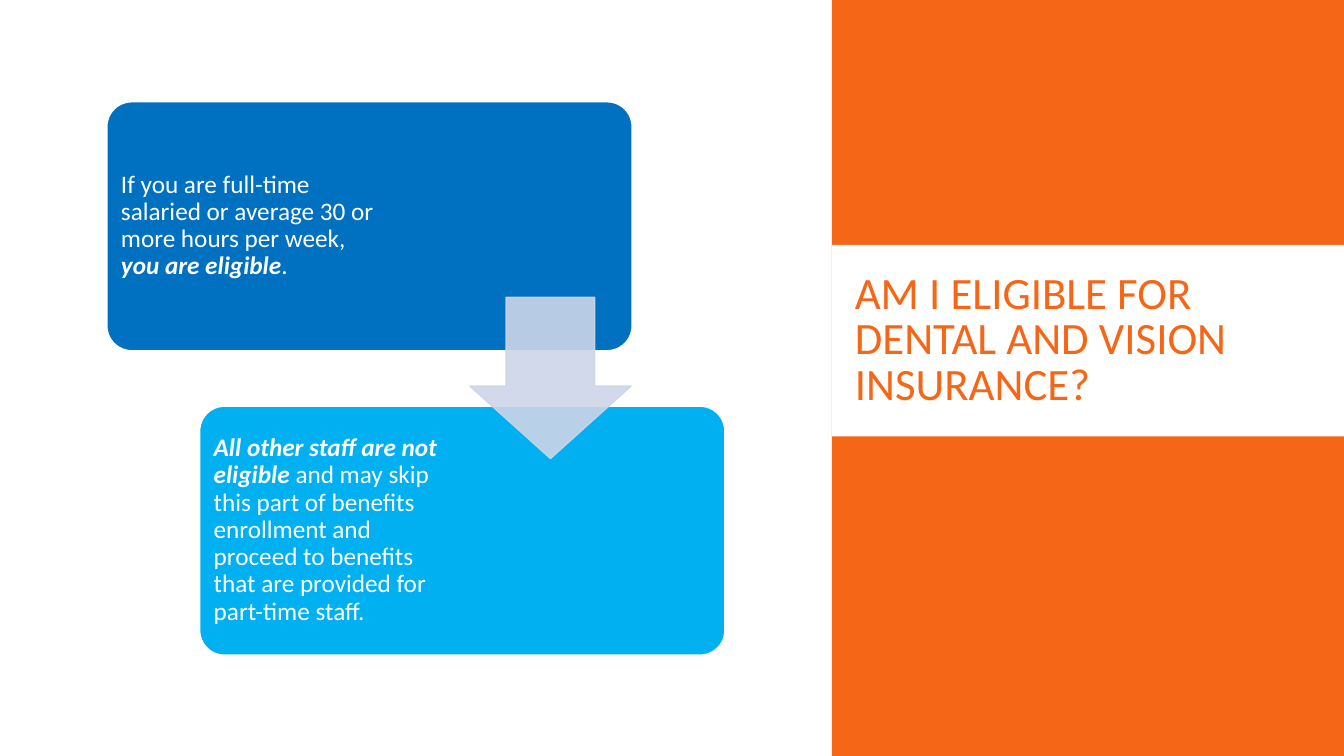
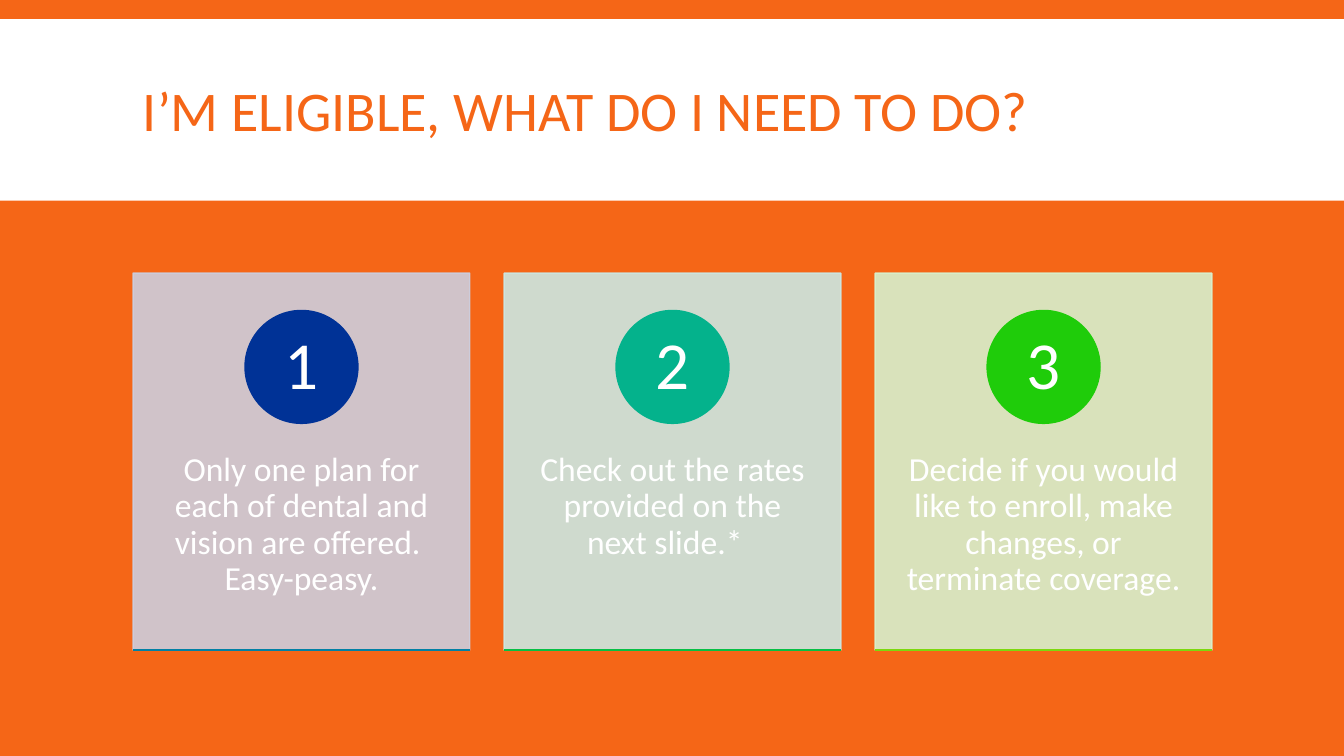
import pptx
import pptx.util
import pptx.dml.color
import pptx.enum.shapes
import pptx.enum.text
import pptx.oxml.ns
import lxml.etree

Inches = pptx.util.Inches
Pt = pptx.util.Pt
Shape = pptx.enum.shapes.MSO_SHAPE
Align = pptx.enum.text.PP_ALIGN
Anchor = pptx.enum.text.MSO_ANCHOR

COLORS = {
    "orange": "F56617", "white": "FFFFFF", "blue": "0070C0", "sky": "00B0F0",
    "mist": "CCD5E8", "lilac": "CCCEDD", "navy": "003296", "teal": "0280A4",
    "aqua": "CBE7E2", "jade": "04B28C", "green": "07BF45",
    "mint": "D7F0CD", "lime": "1FCC0A", "leaf": "7DD80E",
}
PLAIN = {"name": "Calibri", "bold": False, "italic": False}
STRONG = {"name": "Calibri", "bold": True, "italic": True}
TITLE = {"color": "orange", "gap": 0.85, "pad": (0.1, 0.05)}
MIDDLE = {"align": Align.CENTER}

ASK = "AM I ELIGIBLE FOR DENTAL AND VISION INSURANCE?"
RULES = [
    ("blue", 1.06, 1.01, 2.66, [
        ("If you are full-time salaried or average 30 or more hours per week, ", PLAIN),
        ("you are eligible", STRONG),
        (".", PLAIN)]),
    ("sky", 1.98, 4.03, 2.54, [
        ("All other staff are not eligible", STRONG),
        (" and may skip this part of benefits enrollment and proceed to "
         "benefits that are provided for part-time staff.", PLAIN)]),
]
TODO = "I’M ELIGIBLE, WHAT DO I NEED TO DO?"
STEPS = [
    ("Only one plan for each of dental and vision are offered.  Easy-peasy.",
     "lilac", "navy", "teal"),
    ("Check out the rates provided on the next slide.*  ", "aqua", "jade", "green"),
    ("Decide if you would like to enroll, make changes, or terminate coverage.",
     "mint", "lime", "leaf"),
]


def rgb(name):
    return pptx.dml.color.RGBColor.from_string(COLORS[name])


def fade(shape, alpha):
    for node in shape._element.spPr.iter(pptx.oxml.ns.qn("a:srgbClr")):
        lxml.etree.SubElement(node, pptx.oxml.ns.qn("a:alpha"), val=str(alpha * 1000))


def block(slide, kind, box, fill, edge=None, adjust=(), alpha=None):
    shape = slide.shapes.add_shape(kind, *map(Inches, box))
    shape.shadow.inherit = False
    shape.fill.solid()
    shape.fill.fore_color.rgb = rgb(fill)
    if edge:
        shape.line.color.rgb = rgb(edge)
        shape.line.width = Pt(1)
    else:
        shape.line.fill.background()
    for i, value in enumerate(adjust):
        shape.adjustments[i] = value
    if alpha:
        fade(shape, alpha)
    return shape


def label(slide, box, runs, size, color="white", gap=0.9, pad=(0.07, 0.07),
          align=Align.LEFT, anchor=Anchor.MIDDLE):
    frame = slide.shapes.add_textbox(*map(Inches, box)).text_frame
    side, top = map(Inches, pad)
    form = {"word_wrap": True, "vertical_anchor": anchor,
            "margin_left": side, "margin_right": side,
            "margin_top": top, "margin_bottom": top}
    for key, value in form.items():
        setattr(frame, key, value)
    para = frame.paragraphs[0]
    para.alignment = align
    para.line_spacing = gap
    for text, style in runs:
        run = para.add_run()
        run.text = text
        for key, value in {**style, "size": Pt(size)}.items():
            setattr(run.font, key, value)
        run.font.color.rgb = rgb(color)


def rule(slide, left, top, width, color):
    line = slide.shapes.add_connector(
        pptx.enum.shapes.MSO_CONNECTOR.STRAIGHT,
        *map(Inches, (left, top, left + width, top)))
    line.line.color.rgb = rgb(color)
    line.line.width = Pt(1)
    lxml.etree.SubElement(line._element.spPr, pptx.oxml.ns.qn("a:effectLst"))


def begin(deck, color):
    slide = deck.slides.add_slide(deck.slide_layouts[6])
    slide.background.fill.solid()
    slide.background.fill.fore_color.rgb = rgb(color)
    return slide


def rules(deck):
    slide = begin(deck, "white")
    block(slide, Shape.RECTANGLE, (8.25, 0, 5.08, 7.5), "orange")
    block(slide, Shape.RECTANGLE, (8.25, 2.43, 5.08, 1.9), "white")
    label(slide, (8.38, 2.56, 4.52, 1.65), [(ASK, PLAIN)], 32, **TITLE)
    for fill, left, top, width, runs in RULES:
        block(slide, Shape.ROUNDED_RECTANGLE, (left, top, 5.21, 2.47),
              fill, "white", [0.1])
        label(slide, (left + 0.07, top + 0.07, width, 2.32), runs, 18)
    block(slide, Shape.DOWN_ARROW, (4.66, 2.95, 1.6, 1.6),
          "mist", "mist", [0.45, 0.55], 90)
    arrow = slide.shapes[-1]
    arrow.adjustments[0], arrow.adjustments[1] = 0.55, 0.45


def steps(deck):
    slide = begin(deck, "orange")
    block(slide, Shape.RECTANGLE, (0, 0.19, 13.33, 1.8), "white")
    label(slide, (1.32, 0.31, 10.7, 1.65), [(TODO, PLAIN)], 40, **TITLE)
    wide, high, top, disc, core = 3.34, 3.74, 2.71, 1.12, 0.79
    pitch = (10.7 - wide) / (len(STEPS) - 1)
    for i, (text, card, dot, base) in enumerate(STEPS):
        left = 1.32 + i * pitch
        mid = left + wide / 2
        block(slide, Shape.RECTANGLE, (left, top, wide, high), card, card, alpha=90)
        label(slide, (left, 4.13, wide, 2.24), [(text, PLAIN)], 24,
              pad=(0.26, 0.36), anchor=Anchor.TOP, **MIDDLE)
        block(slide, Shape.OVAL, (mid - disc / 2, 3.08, disc, disc), dot, dot)
        label(slide, (mid - core / 2, 3.25, core, core), [(str(i + 1), PLAIN)], 48,
              pad=(0.09, 0.01), **MIDDLE)
        rule(slide, left, top + high, wide, base)


def main():
    deck = pptx.Presentation()
    deck.slide_width = Inches(13.33)
    deck.slide_height = Inches(7.5)
    rules(deck)
    steps(deck)
    deck.save("out.pptx")


if __name__ == "__main__":
    main()
